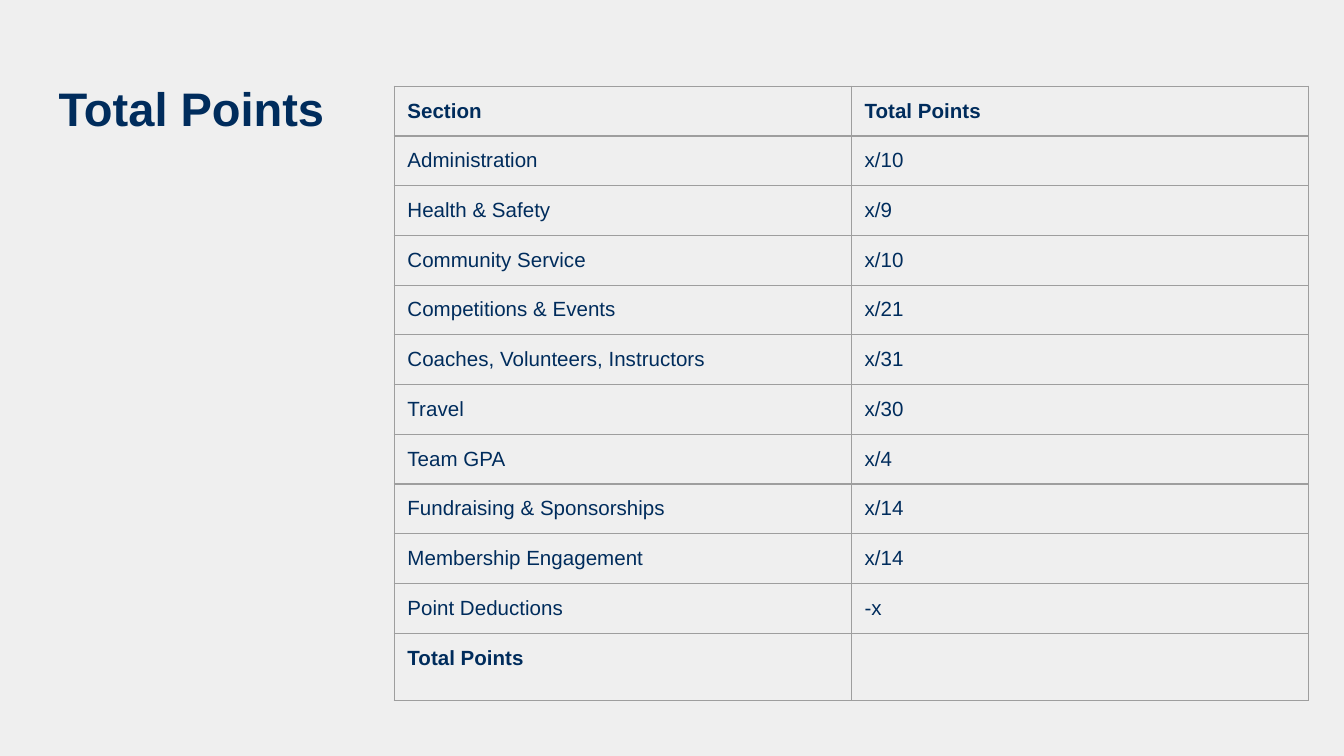
from lxml import etree
from pptx import Presentation
from pptx.dml.color import RGBColor
from pptx.enum import text
from pptx.oxml import ns
from pptx.util import Cm, Pt

COLORS = {"background": "EFEFEF", "navy": "002C5C", "border": "9E9E9E"}
FONT = "Arial"
INSET = Cm(0.25)

ROWS = [
    ("Section", "Total Points"),
    ("Administration", "x/10"),
    ("Health & Safety", "x/9"),
    ("Community Service", "x/10"),
    ("Competitions & Events", "x/21"),
    ("Coaches, Volunteers, Instructors", "x/31"),
    ("Travel", "x/30"),
    ("Team GPA", "x/4"),
    ("Fundraising & Sponsorships", "x/14"),
    ("Membership Engagement", "x/14"),
    ("Point Deductions", "-x"),
    ("Total Points", ""),
]


def color(name):
    return RGBColor.from_string(COLORS[name])


def style_paragraph(para, size, bold):
    para.alignment = text.PP_ALIGN.LEFT
    para.font.name = FONT
    para.font.size = Pt(size)
    para.font.bold = bold
    para.font.color.rgb = color("navy")


def set_insets(box):
    box.margin_left = box.margin_right = INSET
    box.margin_top = box.margin_bottom = INSET


def add_title(page, wording):
    title = page.shapes.title
    title.left, title.top = Cm(0.86), Cm(1.24)
    title.width, title.height = Cm(23.67), Cm(1.6)
    frame = title.text_frame
    frame.text = wording
    frame.word_wrap = True
    frame.auto_size = text.MSO_AUTO_SIZE.NONE
    frame.vertical_anchor = text.MSO_ANCHOR.MIDDLE
    set_insets(frame)
    style_paragraph(frame.paragraphs[0], 25.2, True)


def add_borders(cell):
    properties = cell._tc.get_or_add_tcPr()
    for index, side in enumerate(("lnL", "lnR", "lnT", "lnB")):
        line = etree.Element(ns.qn(f"a:{side}"), w=str(Pt(0.75)))
        fill = etree.SubElement(line, ns.qn("a:solidFill"))
        etree.SubElement(fill, ns.qn("a:srgbClr"), val=COLORS["border"])
        properties.insert(index, line)  # borders come before the fill


def add_points_table(page):
    row_height, total_height = Cm(0.94), Cm(1.22)
    column_width = Cm(8.64)
    last = len(ROWS) - 1
    frame = page.shapes.add_table(
        len(ROWS), 2, Cm(7.45), Cm(1.63),
        column_width * 2, row_height * last + total_height)
    table = frame.table
    table.first_row = table.horz_banding = False
    for column in table.columns:
        column.width = column_width

    for index, (row, values) in enumerate(zip(table.rows, ROWS)):
        row.height = total_height if index == last else row_height
        for cell, value in zip(row.cells, values):
            cell.fill.background()
            add_borders(cell)
            set_insets(cell)
            cell.vertical_anchor = text.MSO_ANCHOR.TOP
            if value:
                cell.text = value
                style_paragraph(cell.text_frame.paragraphs[0], 11,
                                index in (0, last))


def main():
    deck = Presentation()
    deck.slide_width, deck.slide_height = Cm(25.4), Cm(14.29)

    # Title-only page on a light grey background
    page = deck.slides.add_slide(deck.slide_layouts[5])
    page.background.fill.solid()
    page.background.fill.fore_color.rgb = color("background")

    add_title(page, "Total Points")
    add_points_table(page)
    deck.save("out.pptx")


if __name__ == "__main__":
    main()
